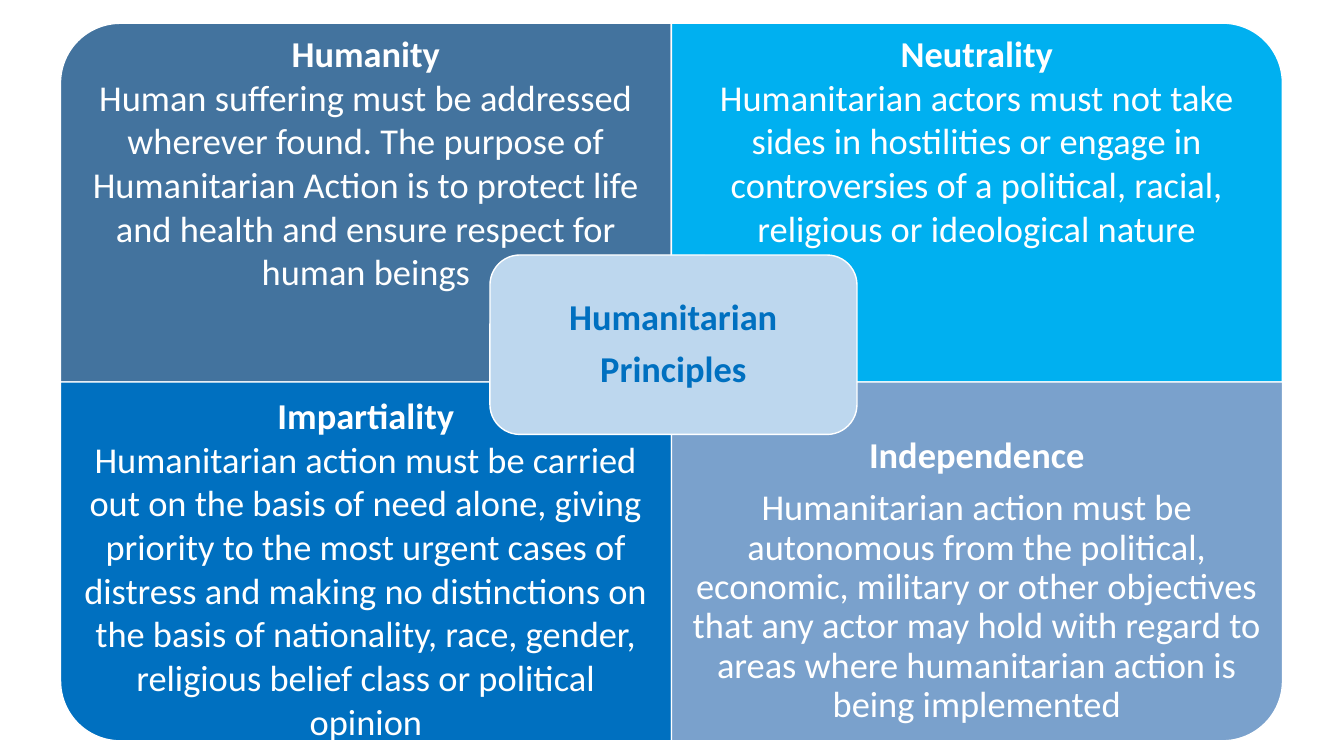
"""Build a slide with four humanitarian principles around a central label."""
from pptx import Presentation
from pptx.dml.color import RGBColor
from pptx.enum import shapes, text
from pptx.util import Inches, Pt

WHITE = RGBColor(0xFF, 0xFF, 0xFF)
STEEL = RGBColor(0x43, 0x73, 0x9E)
SKY = RGBColor(0x00, 0xB0, 0xF0)
BLUE = RGBColor(0x00, 0x70, 0xC0)
HAZE = RGBColor(0x7A, 0xA1, 0xCC)
PALE = RGBColor(0xBD, 0xD7, 0xEE)

LOOSE = {"line_spacing": 0.9, "space_after": 9.1}
PRINCIPLES = [
    {"name": "Humanity", "column": 0, "row": 0, "turn": 270, "color": STEEL,
     "text_offset": 0.08, "spacing": {},
     "meaning": "Human suffering must be addressed wherever found. The purpose of "
                "Humanitarian Action is to protect life and health and ensure "
                "respect for human beings"},
    {"name": "Neutrality", "column": 1, "row": 0, "turn": 0, "color": SKY,
     "text_offset": 0.08, "spacing": {},
     "meaning": "Humanitarian actors must not take sides in hostilities or engage in "
                "controversies of a political, racial, religious or ideological nature"},
    {"name": "Impartiality", "column": 0, "row": 1, "turn": 180, "color": BLUE,
     "text_offset": 0.11, "spacing": {},
     "meaning": "Humanitarian action must be carried out on the basis of need alone, "
                "giving priority to the most urgent cases of distress and making no "
                "distinctions on the basis of nationality, race, gender, religious "
                "belief class or political opinion"},
    {"name": "Independence", "column": 1, "row": 1, "turn": 90, "color": HAZE,
     "text_offset": 0.55, "spacing": LOOSE,
     "meaning": "Humanitarian action must be autonomous from the political, economic, "
                "military or other objectives that any actor may hold with regard to "
                "areas where humanitarian action is being implemented"},
]
CENTER_LINES = ["Humanitarian", "Principles"]

LEFT, TOP = 0.6, 0.23
WIDTH, HEIGHT = 6.06, 3.56
SIDE_INSET = 0.2
CENTER_WIDTH, CENTER_HEIGHT = 3.64, 1.78


def add_panel(slide, preset, left, top, width, height, color):
    panel = slide.shapes.add_shape(
        preset, Inches(left), Inches(top), Inches(width), Inches(height))
    panel.shadow.inherit = False
    panel.fill.solid()
    panel.fill.fore_color.rgb = color
    panel.line.color.rgb = WHITE
    panel.line.width = Pt(1)
    return panel


def write_line(frame, words, *, color=WHITE, bold=False, first=False,
               line_spacing=1.0, space_after=0):
    paragraph = frame.paragraphs[0] if first else frame.add_paragraph()
    paragraph.alignment = text.PP_ALIGN.CENTER
    paragraph.line_spacing = line_spacing
    paragraph.space_after = Pt(space_after)
    run = paragraph.add_run()
    run.text = words
    run.font.name = "Calibri"
    run.font.size = Pt(26)
    run.font.bold = bold
    run.font.color.rgb = color


def add_principle(slide, principle):
    left = LEFT + principle["column"] * WIDTH
    top = TOP + principle["row"] * HEIGHT
    turn = principle["turn"]
    width, height = (HEIGHT, WIDTH) if turn % 180 else (WIDTH, HEIGHT)
    quadrant = add_panel(
        slide, shapes.MSO_SHAPE.ROUND_1_RECTANGLE,
        left + (WIDTH - width) / 2, top + (HEIGHT - height) / 2,
        width, height, principle["color"])
    quadrant.rotation = turn

    offset = principle["text_offset"]
    frame = slide.shapes.add_textbox(
        Inches(left), Inches(top + offset),
        Inches(WIDTH), Inches(HEIGHT - offset)).text_frame
    frame.word_wrap = True
    frame.vertical_anchor = text.MSO_ANCHOR.TOP
    frame.margin_left = frame.margin_right = Inches(SIDE_INSET)
    frame.margin_top = frame.margin_bottom = 0
    write_line(frame, principle["name"], bold=True, first=True, **principle["spacing"])
    write_line(frame, principle["meaning"], **principle["spacing"])


def main():
    deck = Presentation()
    deck.slide_width, deck.slide_height = Inches(13.33), Inches(7.5)
    slide = deck.slides.add_slide(deck.slide_layouts[6])
    for principle in PRINCIPLES:
        add_principle(slide, principle)

    center = add_panel(
        slide, shapes.MSO_SHAPE.ROUNDED_RECTANGLE,
        LEFT + WIDTH - CENTER_WIDTH / 2 + 0.02, 2.53,
        CENTER_WIDTH, CENTER_HEIGHT, PALE)
    frame = center.text_frame
    frame.word_wrap = True
    frame.vertical_anchor = text.MSO_ANCHOR.MIDDLE
    for index, words in enumerate(CENTER_LINES):
        write_line(frame, words, color=BLUE, bold=True, first=index == 0, **LOOSE)
    deck.save("out.pptx")


if __name__ == "__main__":
    main()
